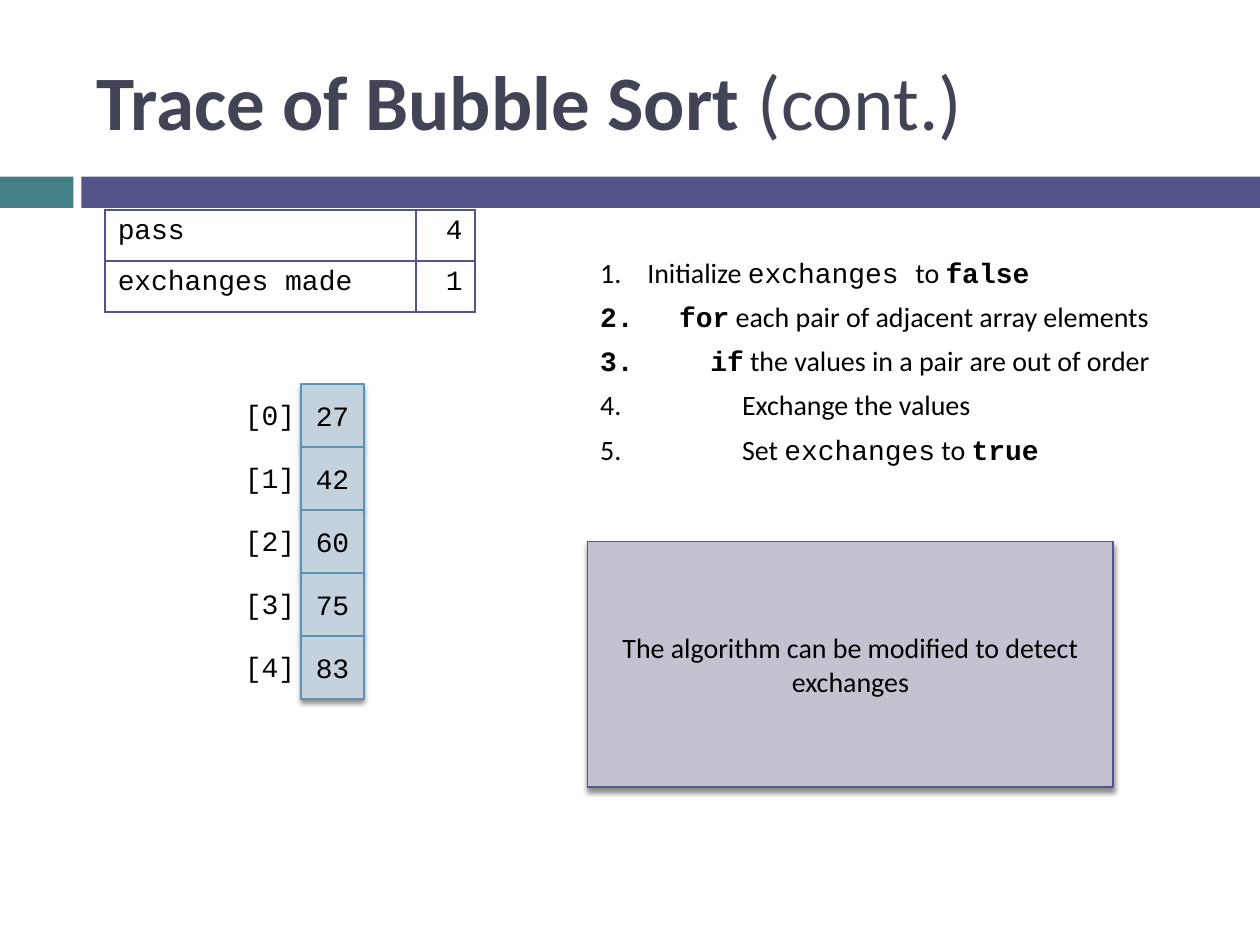
from collections import namedtuple

from lxml import etree
from pptx import Presentation
from pptx import util as u
from pptx.dml import color
from pptx.enum import shapes, text
from pptx.oxml import ns

Box = namedtuple("Box", "left top width height")

COLOURS = {
    "teal": "438086",
    "indigo": "53548A",
    "title": "424456",
    "black": "000000",
    "cell": "C4D2DE",
    "cell_line": "5C92B5",
    "note": "C3C3CF",
}
SANS, MONO = "Calibri", "Courier New"
ALIGN, ANCHOR = text.PP_ALIGN, text.MSO_ANCHOR


def rgb(name):
    return color.RGBColor.from_string(COLOURS[name])


def place(box):
    return [u.Cm(length) for length in box]


def add_child(parent, tag, **attributes):
    return etree.SubElement(parent, ns.qn(tag), attributes)


def add_span(para, content, font=SANS, size=16, bold=False, colour="black"):
    span = para.add_run()
    span.text = content
    span.font.name = font
    span.font.size = u.Pt(size)
    span.font.bold = bold
    span.font.color.rgb = rgb(colour)


def add_text_box(parts, box, anchor=ANCHOR.TOP):
    frame = parts.add_textbox(*place(box)).text_frame
    frame.word_wrap = True
    frame.vertical_anchor = anchor
    return frame


def add_rectangle(parts, box, fill, line=None):
    rectangle = parts.add_shape(shapes.MSO_SHAPE.RECTANGLE, *place(box))
    rectangle.shadow.inherit = False
    rectangle.fill.solid()
    rectangle.fill.fore_color.rgb = rgb(fill)
    if line:
        rectangle.line.color.rgb = rgb(line)
        rectangle.line.width = u.Pt(0.79)
    else:
        rectangle.line.fill.background()
    return rectangle


def add_shadowed_label(parts, box, content, fill, line, font):
    rectangle = add_rectangle(parts, box, fill, line)
    effects = rectangle.element.spPr.find(ns.qn("a:effectLst"))
    shadow = add_child(effects, "a:outerShdw", blurRad=str(u.Pt(3)), dist=str(u.Pt(2.4)),
                       dir="5400000", algn="ctr", rotWithShape="0")
    shade = add_child(shadow, "a:srgbClr", val=COLOURS["black"])
    add_child(shade, "a:alpha", val="45000")
    frame = rectangle.text_frame
    frame.word_wrap = True
    frame.vertical_anchor = ANCHOR.MIDDLE
    para = frame.paragraphs[0]
    para.alignment = ALIGN.CENTER
    add_span(para, content, font=font)


def add_header(page, box):
    band_top, band_height, accent_width, bar_left = 3.56, 0.63, 1.48, 1.64
    top = box.top + band_top
    add_rectangle(page.shapes, Box(box.left, top, accent_width, band_height), "teal")
    add_rectangle(page.shapes, Box(box.left + bar_left, top, box.width - bar_left, band_height), "indigo")
    title_box = Box(box.left + 1.69, box.top + 0.64, 22.65, 2.75)
    para = add_text_box(page.shapes, title_box, ANCHOR.MIDDLE).paragraphs[0]
    add_span(para, "Trace of Bubble Sort ", size=44, bold=True, colour="title")
    add_span(para, "(cont.)", size=44, colour="title")


def add_algorithm(page, box):
    steps = [
        (0.95, [("Initialize ", SANS, False), ("exchanges ", MONO, False),
                ("to ", SANS, False), ("false", MONO, True)]),
        (1.59, [("for", MONO, True), (" each pair of adjacent array elements", SANS, False)]),
        (2.22, [("if", MONO, True), (" the values in a pair are out of order", SANS, False)]),
        (2.86, [("Exchange the values", SANS, False)]),
        (2.86, [("Set ", SANS, False), ("exchanges", MONO, False),
                (" to ", SANS, False), ("true", MONO, True)]),
    ]
    frame = add_text_box(page.shapes, box)
    for index, (indent, spans) in enumerate(steps):
        para = frame.add_paragraph() if index else frame.paragraphs[0]
        para.space_after = u.Pt(6)
        properties = para._p.get_or_add_pPr()
        properties.set("marL", str(u.Cm(indent)))
        properties.set("indent", str(-u.Cm(indent)))
        add_child(properties, "a:buFontTx")
        add_child(properties, "a:buAutoNum", type="arabicPeriod")
        for content, font, bold in spans:
            add_span(para, content, font=font, bold=bold)


def add_array(page, box, values):
    parts = page.shapes.add_group_shape().shapes
    side = box.height / len(values)
    cell_left = box.left + box.width - side
    for index, value in enumerate(values):
        top = box.top + index * side
        add_shadowed_label(parts, Box(cell_left, top, side, side), str(value),
                           "cell", "cell_line", MONO)
        para = add_text_box(parts, Box(box.left, top + 0.15, 1.85, 0.94)).paragraphs[0]
        para.alignment = ALIGN.CENTER
        add_span(para, f"[{index}]", font=MONO)


def add_borders(cell):
    properties = cell._tc.get_or_add_tcPr()
    for side in "LRTB":
        border = add_child(properties, f"a:ln{side}", w=str(u.Pt(1)))
        fill = add_child(border, "a:solidFill")
        add_child(fill, "a:srgbClr", val=COLOURS["indigo"])


def add_counters(page, box, rows):
    table = page.shapes.add_table(len(rows), 2, *place(box)).table
    table.first_row = table.horz_banding = False
    value_width = 1.19
    table.columns[0].width = u.Cm(box.width - value_width)
    table.columns[1].width = u.Cm(value_width)
    for row, contents in zip(table.rows, rows):
        for cell, content, align in zip(row.cells, contents, (ALIGN.LEFT, ALIGN.RIGHT)):
            add_borders(cell)
            cell.fill.background()
            para = cell.text_frame.paragraphs[0]
            para.alignment = align
            add_span(para, content, font=MONO)


def add_note(page, box):
    add_shadowed_label(page.shapes, box, "The algorithm can be modified to detect exchanges",
                       "note", "indigo", SANS)


def main():
    deck = Presentation()
    deck.slide_width, deck.slide_height = u.Cm(25.4), u.Cm(19.05)
    page = deck.slides.add_slide(deck.slide_layouts[6])
    add_header(page, Box(0, 0, 25.4, 4.19))
    add_algorithm(page, Box(11.85, 5.03, 13.13, 5.44))
    add_array(page, Box(4.52, 7.74, 2.82, 6.35), [27, 42, 60, 75, 83])
    add_counters(page, Box(2.12, 4.23, 7.46, 2.06), [("pass", "4"), ("exchanges made", "1")])
    add_note(page, Box(11.85, 10.92, 10.59, 4.95))
    deck.save("out.pptx")


if __name__ == "__main__":
    main()
